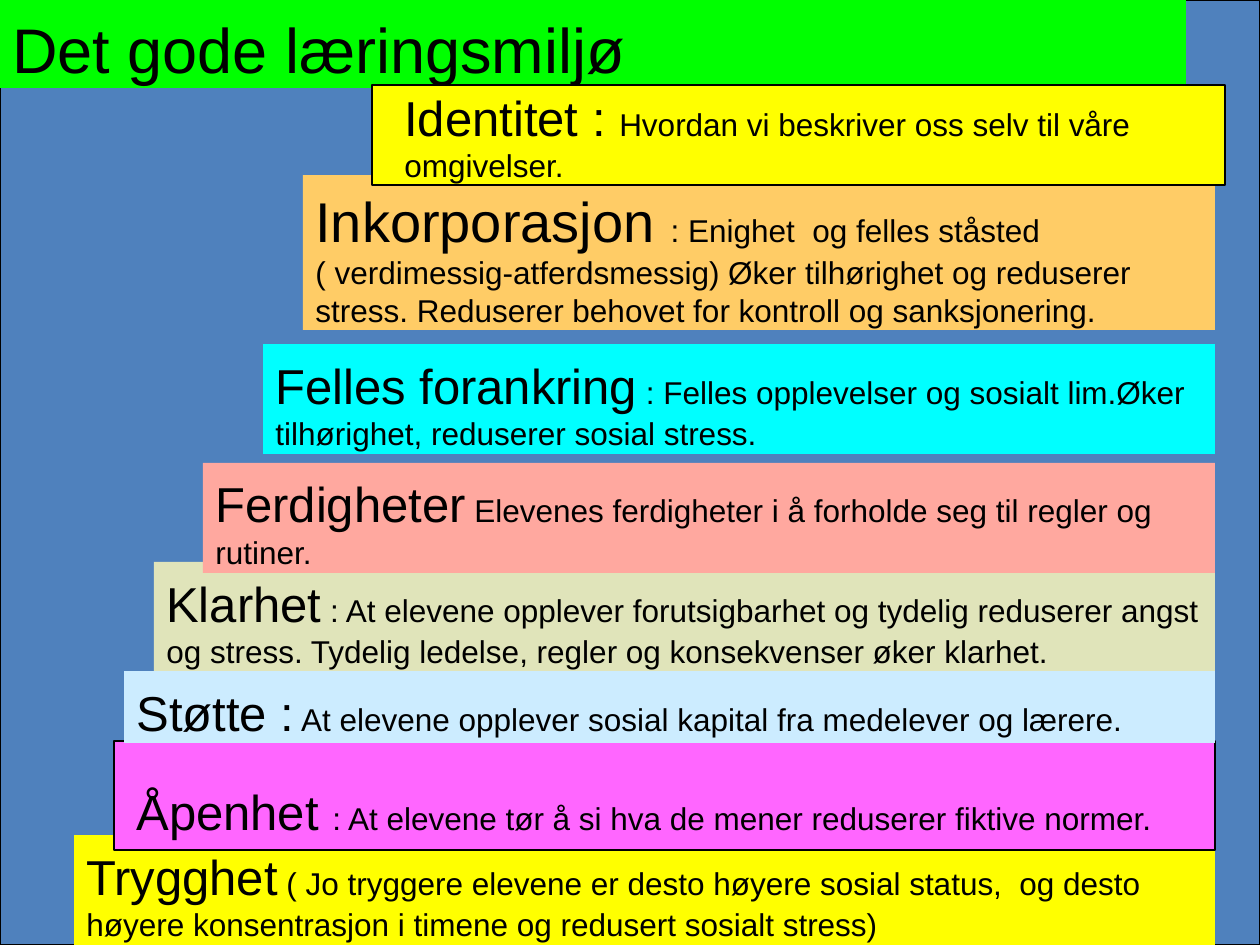
"""Build the slide "Det gode læringsmiljø" as a staircase of coloured steps."""
from pptx import Presentation
from pptx.dml.color import RGBColor
from pptx.enum.shapes import MSO_SHAPE as SHAPE
from pptx.enum.text import MSO_ANCHOR as ANCHOR, PP_ALIGN as ALIGN
from pptx.util import Emu, Pt

PX = 914400 / 126
WIDTH, HEIGHT = 1260, 945
RIGHT = 1215
BLACK = "000000"
TITLE = ("Det gode læringsmiljø", 36, "")

PANELS = {
    "Åpenhet": (114, 741, 1101, 109, "FF66FF"),
    "Identitet": (372, 85, 853, 100, "FFFF00"),
}
STEPS = [
    (74, 835, 110, "FFFF00", "Trygghet", 28,
     " ( Jo tryggere elevene er desto høyere sosial status,  og desto "
     "høyere konsentrasjon i timene og redusert sosialt stress)"),
    (124, 770, 72, None, "Åpenhet ", 28,
     ": At elevene tør å si hva de mener reduserer fiktive normer."),
    (154, 562, 110, "E0E4BA", "Klarhet", 28,
     " : At elevene opplever forutsigbarhet og tydelig reduserer angst og stress. "
     "Tydelig ledelse, regler og konsekvenser øker klarhet."),
    (203, 463, 110, "FFA89F", "Ferdigheter", 28,
     " Elevenes ferdigheter i å forholde seg til regler og rutiner."),
    (263, 344, 110, "00FFFF", "Felles forankring", 28,
     " : Felles opplevelser og sosialt lim.Øker tilhørighet, reduserer sosial stress."),
    (303, 175, 155, "FFCC66", "Inkorporasjon ", 32,
     ": Enighet  og felles ståsted\n( verdimessig-atferdsmessig) Øker tilhørighet og "
     "reduserer stress. Reduserer behovet for kontroll og sanksjonering."),
    (392, 76, 110, None, "Identitet : ", 28,
     "Hvordan vi beskriver oss selv til våre omgivelser."),
    (124, 671, 72, "CCECFF", "Støtte :", 28,
     " At elevene opplever sosial kapital fra medelever og lærere."),
]


def px(n):
    return Emu(round(n * PX))


def color(hex_code):
    return RGBColor.from_string(hex_code)


def add_box(s, x, y, w, h, fill, line=None):
    sp = s.shapes.add_shape(SHAPE.RECTANGLE, px(x), px(y), px(w), px(h))
    sp.shadow.inherit = False
    sp.fill.solid()
    sp.fill.fore_color.rgb = color(fill)
    if line:
        sp.line.color.rgb = color(line)
        sp.line.width = Pt(0.75)
    else:
        sp.line.fill.background()
    return sp


def add_run(p, text, size):
    r = p.add_run()
    r.text = text
    r.font.size = Pt(size)


def write(sp, label, size, detail):
    tf = sp.text_frame
    tf.word_wrap = True
    tf.vertical_anchor = ANCHOR.TOP
    tf.margin_top = px(11)
    p = tf.paragraphs[0]
    p.alignment = ALIGN.LEFT
    p.font.name = "Arial"
    p.font.color.rgb = color(BLACK)
    add_run(p, label, size)
    for i, part in enumerate(detail.split("\n")):
        if i:
            p.add_line_break()
        if part:
            add_run(p, part, 18)
    for r in p.runs:
        r.font.name = "Arial"
        r.font.color.rgb = color(BLACK)


def main():
    prs = Presentation()
    prs.slide_width, prs.slide_height = px(WIDTH), px(HEIGHT)
    s = prs.slides.add_slide(prs.slide_layouts[6])
    add_box(s, 0, 0, WIDTH, HEIGHT, "4F81BD", BLACK)
    write(add_box(s, 0, 0, 1186, 88, "00FF00"), *TITLE)
    for x, y, h, fill, label, size, detail in STEPS:
        if fill:
            sp = add_box(s, x, y, RIGHT - x, h, fill)
        else:
            add_box(s, *PANELS[label.strip(" :")], BLACK)
            sp = s.shapes.add_textbox(px(x), px(y), px(RIGHT - x), px(h))
        write(sp, label, size, detail)
    prs.save("out.pptx")


if __name__ == "__main__":
    main()
